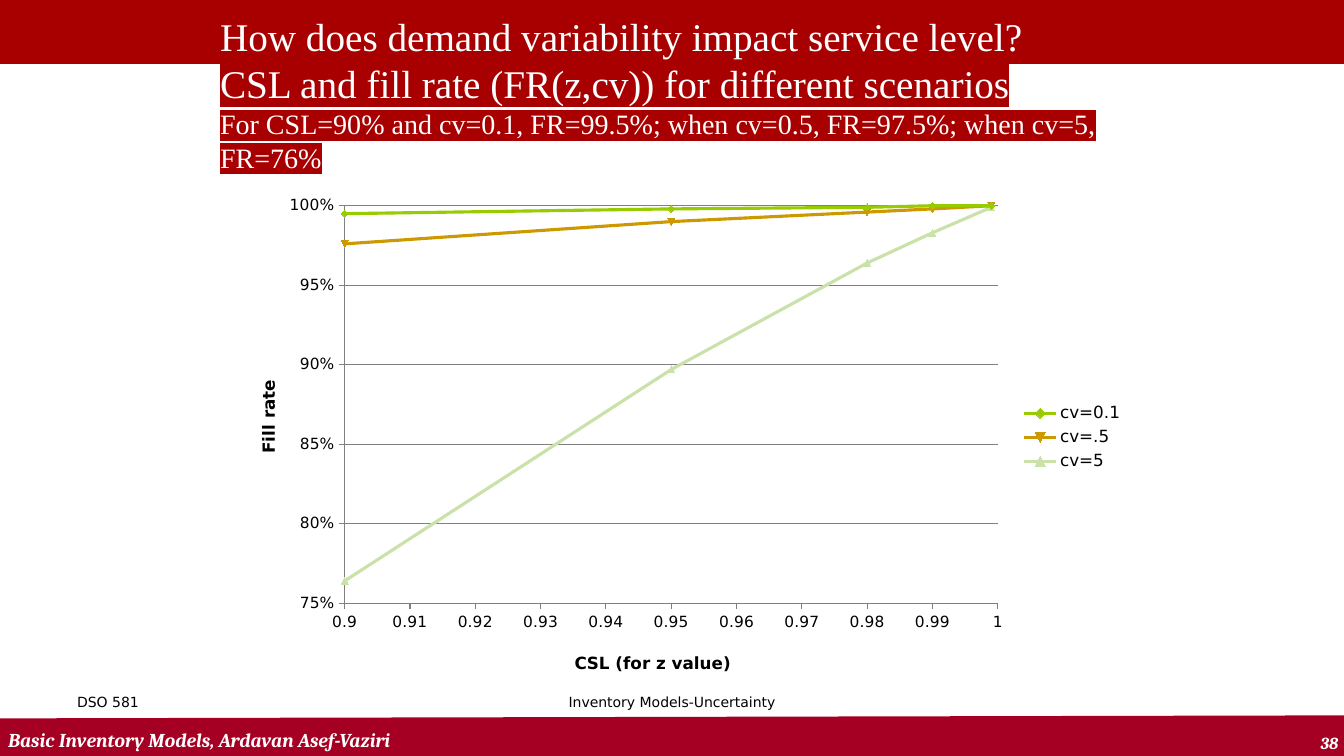
from copy import deepcopy
from dataclasses import dataclass

from lxml.etree import SubElement
from pptx import Presentation
from pptx.chart.data import XyChartData
from pptx.dml.color import RGBColor
from pptx.enum.chart import XL_CHART_TYPE, XL_LEGEND_POSITION, XL_MARKER_STYLE, XL_TICK_MARK
from pptx.enum.shapes import MSO_CONNECTOR, MSO_SHAPE
from pptx.enum.text import MSO_ANCHOR, MSO_AUTO_SIZE, PP_ALIGN
from pptx.oxml.ns import qn
from pptx.util import Inches, Pt

COLS, ROWS = 160, 90
WIDTH, HEIGHT = Inches(13.33), Inches(7.5)


@dataclass(frozen=True)
class Theme:
    """Colours, fonts and type sizes of the slide."""
    header: str = "A80000"
    footer: str = "A50023"
    light: str = "FFFFFF"
    dark: str = "000000"
    grid: str = "808080"
    serif: str = "Times New Roman"
    sans: str = "DejaVu Sans"
    band_font: str = "Cambria"
    title: int = 28
    subtitle: int = 20
    credit: int = 14
    label: int = 12
    tick: int = 11
    note: int = 10


@dataclass(frozen=True)
class Box:
    """A rectangle in columns and rows of the slide grid."""
    x: float
    y: float
    w: float
    h: float

    def inset(self, dx, dy, w, h):
        """Return a box offset from this one's corner."""
        return Box(self.x + dx, self.y + dy, w, h)

    def emu(self):
        """Return left, top, width and height in slide units."""
        return (int(self.x * WIDTH / COLS), int(self.y * HEIGHT / ROWS),
                int(self.w * WIDTH / COLS), int(self.h * HEIGHT / ROWS))


T = Theme()
CSL = (0.9, 0.95, 0.98, 0.99, 0.999)
SERIES = (
    ("cv=0.1", "99CC00", XL_MARKER_STYLE.DIAMOND, (0.995, 0.998, 0.999, 1, 1)),
    ("cv=.5", "CC9900", XL_MARKER_STYLE.AUTOMATIC, (0.976, 0.99, 0.996, 0.998, 1)),
    ("cv=5", "CAE2AA", XL_MARKER_STYLE.TRIANGLE, (0.764, 0.897, 0.964, 0.983, 0.999)),
)
TITLE_LINES = (
    ("How does demand variability impact service level?", T.title),
    ("CSL and fill rate (FR(z,cv)) for different scenarios", T.title),
    ("For CSL=90% and cv=0.1, FR=99.5%; when cv=0.5, FR=97.5%; when cv=5, FR=76%", T.subtitle),
)


def rgb(color):
    """Return an RGB colour from its hex code."""
    return RGBColor.from_string(color)


def style(font, name, size, color, strong=False):
    """Set face, size and colour; strong means bold italic."""
    font.size, font.name = Pt(size), name
    font.color.rgb = rgb(color)
    font.bold = font.italic = strong


def add_text(s, box, text, size, name, color, strong=False,
             align=PP_ALIGN.LEFT, anchor=MSO_ANCHOR.TOP):
    """Place one line of text in a box."""
    tf = s.shapes.add_textbox(*box.emu()).text_frame
    tf.word_wrap, tf.vertical_anchor = True, anchor
    p = tf.paragraphs[0]
    p.alignment = align
    r = p.add_run()
    r.text = text
    style(r.font, name, size, color, strong)


def add_header(s, box):
    """Draw the top bar and the highlighted title over it."""
    bar = s.shapes.add_shape(MSO_SHAPE.RECTANGLE, *box.emu())
    bar.shadow.inherit = False
    bar.fill.solid()
    bar.fill.fore_color.rgb = bar.line.color.rgb = rgb(T.header)
    bar.line.width = Pt(0.75)

    title = s.shapes.title
    s.shapes._spTree.append(title._element)
    title.left, title.top, title.width, title.height = box.inset(25, 3.7, 115, 15).emu()
    tf = title.text_frame
    tf.word_wrap, tf.auto_size = True, MSO_AUTO_SIZE.NONE
    tf.vertical_anchor = MSO_ANCHOR.MIDDLE
    p = tf.paragraphs[0]
    p.alignment = PP_ALIGN.LEFT
    for i, (text, size) in enumerate(TITLE_LINES):
        if i:
            p.add_line_break()
            p._p[-1].append(deepcopy(r._r.rPr))
        r = p.add_run()
        r.text = text
        style(r.font, T.serif, size, T.light)
        mark = SubElement(r._r.rPr, qn("a:highlight"))
        SubElement(mark, qn("a:srgbClr"), val=T.header)
        r._r.rPr.find(qn("a:solidFill")).addnext(mark)


def add_footer(s, box):
    """Draw the bottom band with its credit, page number and notes."""
    x, y, w, h = box.inset(-0.1, 5.96, 160.4, -0.36).emu()
    band = s.shapes.add_connector(MSO_CONNECTOR.STRAIGHT, x, y, x + w, y + h)
    band.line.color.rgb, band.line.width = rgb(T.footer), Pt(29.25)
    SubElement(band._element.spPr, qn("a:effectLst"))
    add_text(s, box.inset(148.5, 4.6, 12, 3.6), "38", T.label, T.band_font, T.light,
             True, PP_ALIGN.RIGHT)
    add_text(s, box.inset(-0.2, 3.9, 125.4, 4.1), "Basic Inventory Models, Ardavan Asef-Vaziri",
             T.credit, T.band_font, T.light, True, anchor=MSO_ANCHOR.BOTTOM)
    add_text(s, box.inset(8, 0, 37.3, 6), "DSO 581", T.note, T.sans, T.dark)
    add_text(s, box.inset(54.7, 0, 50.6, 6), "Inventory Models-Uncertainty",
             T.note, T.sans, T.dark, align=PP_ALIGN.CENTER)


def set_layout(parent, index, **shares):
    """Fix a chart element at shares of the chart's size."""
    layout = parent.find(qn("c:layout"))
    if layout is None:
        layout = SubElement(parent, qn("c:layout"))
        parent.insert(index, layout)
    manual = SubElement(layout, qn("c:manualLayout"))
    if "w" in shares:
        SubElement(manual, qn("c:layoutTarget"), val="inner")
    for key in "xy":
        SubElement(manual, qn(f"c:{key}Mode"), val="edge")
    for key, share in shares.items():
        SubElement(manual, qn(f"c:{key}"), val=str(share))


def format_axis(axis, title, low, step, number_format, x, y):
    """Scale an axis that ends at one and place its title."""
    axis.minimum_scale, axis.maximum_scale, axis.major_unit = low, 1, step
    axis.major_tick_mark, axis.minor_tick_mark = XL_TICK_MARK.OUTSIDE, XL_TICK_MARK.NONE
    axis.tick_labels.number_format = number_format
    axis.tick_labels.number_format_is_linked = False
    style(axis.tick_labels.font, T.sans, T.tick, T.dark)
    axis.format.line.color.rgb = rgb(T.grid)
    r = axis.axis_title.text_frame.paragraphs[0].add_run()
    r.text = title
    style(r.font, T.sans, T.label, T.dark)
    r.font.bold = True
    set_layout(axis.axis_title._element, 1, x=x, y=y)


def add_fill_rate_chart(s, box):
    """Chart the fill rate against CSL for each cv."""
    data = XyChartData()
    for name, _, _, rates in SERIES:
        points = data.add_series(name)
        for csl, rate in zip(CSL, rates):
            points.add_data_point(csl, rate)
    chart = s.shapes.add_chart(XL_CHART_TYPE.XY_SCATTER_LINES, *box.emu(), data).chart
    chart.has_title = False
    style(chart.font, T.sans, T.note, T.dark)
    chart.has_legend = True
    chart.legend.position, chart.legend.include_in_layout = XL_LEGEND_POSITION.RIGHT, False
    style(chart.legend.font, T.sans, T.label, T.dark)

    format_axis(chart.category_axis, "CSL (for z value)", 0.9, 0.01, "General", 0.38, 0.92)
    format_axis(chart.value_axis, "Fill rate", 0.75, 0.05, "0%", 0.03, 0.38)
    chart.category_axis.has_major_gridlines = False
    chart.value_axis.has_major_gridlines = True
    chart.value_axis.major_gridlines.format.line.color.rgb = rgb(T.grid)
    set_layout(chart._chartSpace.chart.plotArea, 0, x=0.13, y=0.04, w=0.72, h=0.79)

    chart.plots[0].vary_by_categories = False
    for i, (ser, (_, color, marker, _)) in enumerate(zip(chart.plots[0].series, SERIES), 1):
        ser._element.find(qn("c:idx")).set("val", str(i))
        ser.smooth = False
        ser.format.line.color.rgb, ser.format.line.width = rgb(color), Pt(2.25)
        ser.marker.style, ser.marker.size = marker, 5
        ser.marker.format.fill.solid()
        ser.marker.format.fill.fore_color.rgb = rgb(color)
        ser.marker.format.line.color.rgb = rgb(color)


def main():
    """Build the slide and save it."""
    prs = Presentation()
    prs.slide_width, prs.slide_height = WIDTH, HEIGHT
    s = prs.slides.add_slide(prs.slide_layouts[5])
    add_footer(s, Box(0, 82, COLS, 8))
    add_header(s, Box(0, -0.1, COLS, 7.7))
    add_fill_rate_chart(s, Box(27, 22.1, 108, 59.9))
    prs.save("out.pptx")


if __name__ == "__main__":
    main()
